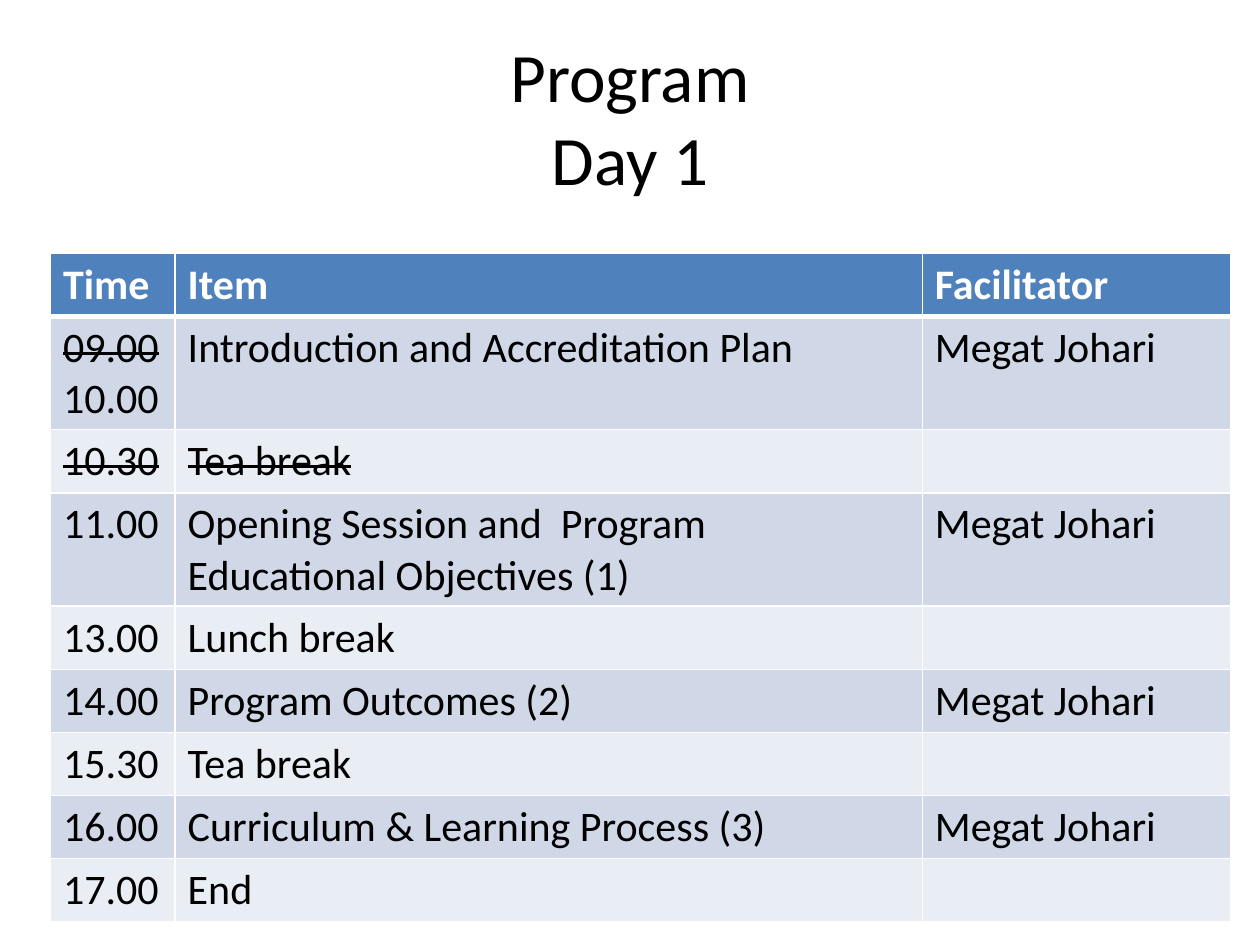
from dataclasses import dataclass

from lxml import etree
from pptx import Presentation
from pptx.dml.color import RGBColor
from pptx.enum.text import MSO_ANCHOR, PP_ALIGN
from pptx.oxml.ns import qn
from pptx.util import Inches, Pt

CENTER = PP_ALIGN.CENTER
LEFT = PP_ALIGN.LEFT
MIDDLE = MSO_ANCHOR.MIDDLE


@dataclass(frozen=True)
class Theme:
    font: str = "Calibri"
    title_size: float = 39.6
    body_size: float = 24
    ink: str = "000000"
    paper: str = "FFFFFF"
    header: str = "4F81BD"
    bands: tuple = ("D0D8E8", "E9EDF4")
    rule: float = 1
    header_rule: float = 3


def write(p, text, size, color, font, bold=False, strike=False, align=LEFT):
    p.alignment = align
    for i, line in enumerate(text.split("\n")):
        if i:
            p.add_line_break()
        r = p.add_run()
        r.text = line
        r.font.size = Pt(size)
        r.font.name = font
        r.font.bold = bold
        r.font.color.rgb = RGBColor.from_string(color)
        if strike:
            r._r.get_or_add_rPr().set("strike", "sngStrike")


def set_borders(cell, color, **widths):
    tcPr = cell._tc.get_or_add_tcPr()
    for side in "LRTB":
        ln = etree.SubElement(tcPr, qn(f"a:ln{side}"), w=str(Pt(widths[side])))
        fill = etree.SubElement(ln, qn("a:solidFill"))
        etree.SubElement(fill, qn("a:srgbClr"), val=color)


class SlideBuilder:
    def __init__(self, prs, theme):
        self.prs = prs
        self.theme = theme
        self.s = prs.slides.add_slide(prs.slide_layouts[6])

    def x(self, share):
        return int(self.prs.slide_width * share)

    def y(self, share):
        return int(self.prs.slide_height * share)

    def title(self, text, left, top, width, height):
        t = self.theme
        box = self.s.shapes.add_textbox(
            self.x(left), self.y(top), self.x(width), self.y(height))
        tf = box.text_frame
        tf.word_wrap = True
        tf.vertical_anchor = MIDDLE
        write(tf.paragraphs[0], text, t.title_size, t.ink, t.font, align=CENTER)

    def table(self, rows, left, top, widths, row_height):
        frame = self.s.shapes.add_table(
            len(rows), len(widths), self.x(left), self.y(top),
            self.x(sum(widths)), self.y(row_height * len(rows)))
        table = frame.table
        for column, width in zip(table.columns, widths):
            column.width = self.x(width)
        for i, row in enumerate(rows):
            for j, lines in enumerate(row):
                self.cell(table.cell(i, j), lines, i)

    def cell(self, cell, lines, row):
        t = self.theme
        is_header = row == 0
        set_borders(cell, t.paper, L=t.rule, R=t.rule,
                    T=t.header_rule if row == 1 else t.rule,
                    B=t.header_rule if is_header else t.rule)
        color = t.header if is_header else t.bands[(row - 1) % 2]
        cell.fill.solid()
        cell.fill.fore_color.rgb = RGBColor.from_string(color)
        tf = cell.text_frame
        for k, (text, strike) in enumerate(lines):
            p = tf.add_paragraph() if k else tf.paragraphs[0]
            write(p, text, t.body_size, t.paper if is_header else t.ink,
                  t.font, bold=is_header, strike=strike)


def plain(text):
    return [(text, False)] if text else []


def struck(text):
    return [(text, True)]


def main():
    prs = Presentation()
    prs.slide_width, prs.slide_height = Inches(10), Inches(7.5)
    slide = SlideBuilder(prs, Theme())

    host = "Megat Johari"
    afternoon = [
        ("11.00", "Opening Session and  Program Educational Objectives (1)", host),
        ("13.00", "Lunch break", ""),
        ("14.00", "Program Outcomes (2)", host),
        ("15.30", "Tea break", ""),
        ("16.00", "Curriculum & Learning Process (3)", host),
        ("17.00", "End", ""),
    ]
    program = [
        [plain(text) for text in ("Time", "Item", "Facilitator")],
        [struck("09.00") + plain("10.00"),
         plain("Introduction and Accreditation Plan"), plain(host)],
        [struck("10.30"), struck("Tea break"), []],
        *[[plain(text) for text in row] for row in afternoon],
    ]

    slide.title("Program\nDay 1", 0.05, 0.04, 0.9, 1 / 6)
    slide.table(program, 0.04, 0.268, (0.099, 0.593, 0.245), 0.41 / 7.5)
    prs.save("out.pptx")


if __name__ == "__main__":
    main()
